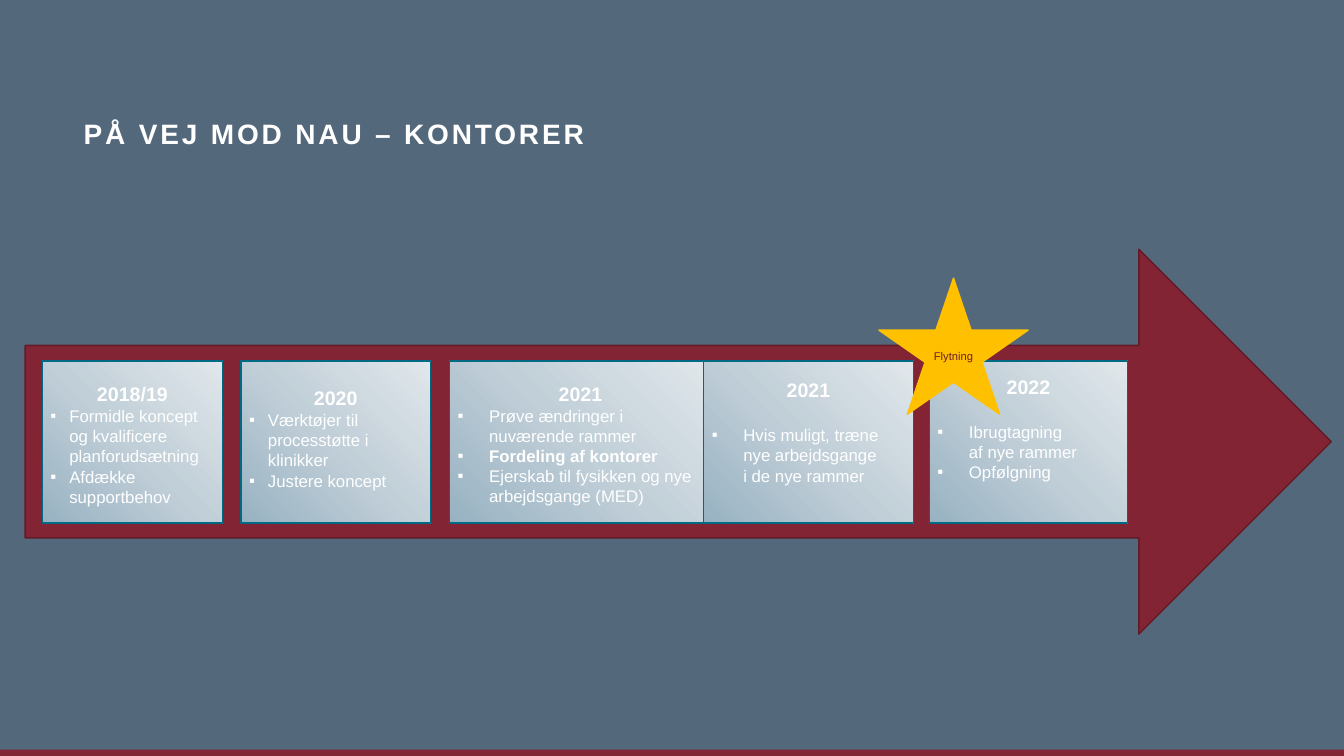
from lxml.etree import SubElement
from pptx import Presentation
from pptx.dml.color import RGBColor
from pptx.enum.shapes import MSO_SHAPE as Preset
from pptx.enum.text import MSO_ANCHOR as Anchor, PP_ALIGN as Align
from pptx.oxml.ns import qn
from pptx.util import Pt

TITLE = "PÅ VEJ MOD NAU – KONTORER"
MILESTONE = "Flytning"

# left and width, top inset, gap under the year, bullet indent
PHASES = [
    {"year": "2018/19", "left": 30.2, "width": 128.9, "inset": 15.2, "gap": 0, "indent": 13.5,
     "points": ["Formidle koncept og kvalificere planforudsætning", "Afdække supportbehov"]},
    {"year": "2020", "left": 172.1, "width": 135.4, "inset": 18.1, "gap": 0, "indent": 13.5,
     "points": ["Værktøjer til processtøtte i klinikker", "Justere koncept"]},
    {"year": "2021", "left": 321.1, "width": 187.2, "inset": 14.9, "gap": 0, "indent": 22.5,
     "points": ["Prøve ændringer i nuværende rammer", "Fordeling af kontorer",
                "Ejerskab til fysikken og nye arbejdsgange (MED)"]},
    {"year": "2021", "left": 502.6, "width": 149.8, "inset": 12.4, "gap": 16.5, "indent": 22.5,
     "points": ["Hvis muligt, træne nye arbejdsgange\vi de nye rammer"]},
    {"year": "2022", "left": 663.8, "width": 141.8, "inset": 9.9, "gap": 16.5, "indent": 22.5,
     "points": ["Ibrugtagning\vaf nye rammer", "Opfølgning"]},
]
EMPHASIZED = {"Fordeling af kontorer"}

THEME = {
    "font": "Arial", "background": "54687C", "red": "822433", "red_line": "601B26",
    "white": "FFFFFF", "box_line": "006983", "star": "FFC000", "star_text": "6E1F2C",
    "gradient": [(0, "98B2C2"), (50, "C1CFD8"), (100, "E1E7EB")],
    "title": 20, "year": 14, "point": 12, "point_line": 14.4, "milestone": 8,
}
SLIDE_W, SLIDE_H = 960, 540
FOOTER_H = 4.5
BOX_TOP, BOX_H, INSET = 257.8, 115.9, 5.8


def rgb(name):
    return RGBColor.from_string(THEME[name])


def add_block(slide, preset, box, fill=None, line=None):
    block = slide.shapes.add_shape(preset, *map(Pt, box))
    block.shadow.inherit = False
    if fill:
        block.fill.solid()
        block.fill.fore_color.rgb = rgb(fill)
    if line:
        block.line.color.rgb = rgb(line)
        block.line.width = Pt(1)
    else:
        block.line.fill.background()
    return block


def set_margins(frame, side, top):
    frame.margin_left = frame.margin_right = frame.margin_bottom = Pt(side)
    frame.margin_top = Pt(top)


def style(paragraph, size, color="white", bold=False, align=Align.LEFT):
    paragraph.alignment = align
    font = paragraph.font
    font.name, font.size, font.bold = THEME["font"], Pt(THEME[size]), bold
    font.color.rgb = rgb(color)
    for run in paragraph.runs:
        run.font.name, run.font.size, run.font.bold = THEME["font"], Pt(THEME[size]), bold
        run.font.color.rgb = rgb(color)


def fill_gradient(block):
    """Shade from the lower left to the upper right with the theme's three stops."""
    block.fill.gradient()
    block.fill.gradient_angle = 45
    stops = block.element.spPr.find(qn("a:gradFill")).find(qn("a:gsLst"))
    for stop in list(stops):
        stops.remove(stop)
    for percent, color in THEME["gradient"]:
        stop = SubElement(stops, qn("a:gs"), pos=str(percent * 1000))
        SubElement(stop, qn("a:srgbClr"), val=color)


def add_bullet(paragraph, indent):
    properties = paragraph._p.get_or_add_pPr()
    properties.set("marL", str(Pt(indent)))
    properties.set("indent", str(-Pt(indent)))
    SubElement(properties, qn("a:buFont"), typeface=THEME["font"])
    SubElement(properties, qn("a:buChar"), char="▪")


def add_phase(slide, phase):
    box = add_block(slide, Preset.RECTANGLE,
                    (phase["left"], BOX_TOP, phase["width"], BOX_H), line="box_line")
    fill_gradient(box)
    frame = box.text_frame
    frame.word_wrap = True
    frame.vertical_anchor = Anchor.TOP
    set_margins(frame, INSET, phase["inset"])
    year = frame.paragraphs[0]
    year.text = phase["year"]
    style(year, "year", bold=True, align=Align.CENTER)
    year.space_after = Pt(phase["gap"])
    for point in phase["points"]:
        paragraph = frame.add_paragraph()
        paragraph.text = point
        add_bullet(paragraph, phase["indent"])
        style(paragraph, "point", bold=point in EMPHASIZED)
        paragraph.line_spacing = Pt(THEME["point_line"])


def add_title(slide):
    title = slide.shapes.add_textbox(Pt(59.8), Pt(28.1), Pt(838.8), Pt(79.2))
    frame = title.text_frame
    frame.word_wrap = True
    frame.vertical_anchor = Anchor.BOTTOM
    set_margins(frame, 0, 0)
    frame.text = TITLE
    heading = frame.paragraphs[0]
    style(heading, "title", bold=True)
    heading.line_spacing = 0.9
    heading.runs[0].font._element.set("spc", "200")


def add_milestone(slide):
    star = add_block(slide, Preset.STAR_5_POINT, (627.8, 198.7, 106.6, 97.2), "star", "star")
    frame = star.text_frame
    frame.word_wrap = False
    frame.vertical_anchor = Anchor.MIDDLE
    set_margins(frame, INSET, INSET)
    frame.text = MILESTONE
    style(frame.paragraphs[0], "milestone", "star_text", align=Align.CENTER)


def main():
    deck = Presentation()
    deck.slide_width, deck.slide_height = Pt(SLIDE_W), Pt(SLIDE_H)
    slide = deck.slides.add_slide(deck.slide_layouts[6])
    slide.background.fill.solid()
    slide.background.fill.fore_color.rgb = rgb("background")
    add_block(slide, Preset.RECTANGLE, (0, SLIDE_H - FOOTER_H, SLIDE_W, FOOTER_H), "red")
    add_title(slide)
    add_block(slide, Preset.RIGHT_ARROW, (18, 178, 933, 275), "red", "red_line")
    for phase in PHASES:
        add_phase(slide, phase)
    add_milestone(slide)
    deck.save("out.pptx")


if __name__ == "__main__":
    main()
